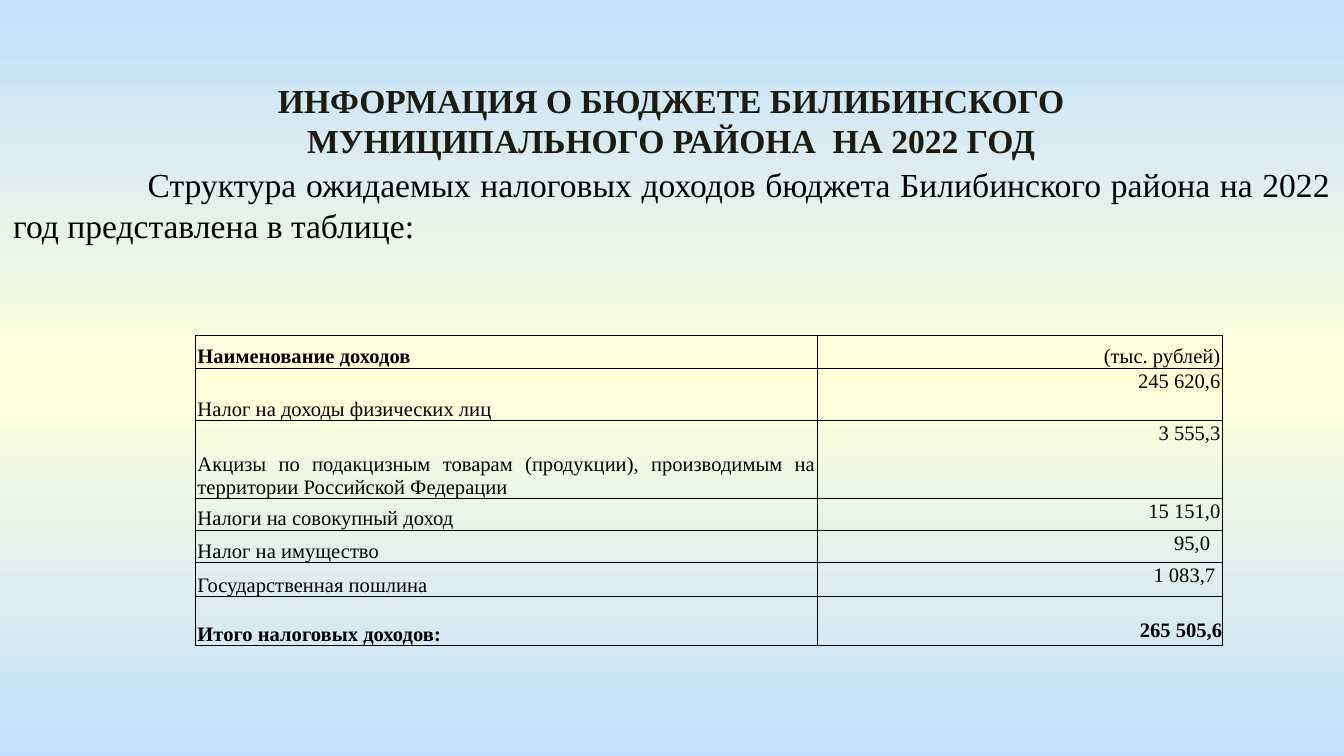
"""Build the slide on the expected tax revenues of the district budget for 2022."""
from copy import deepcopy

from pptx import Presentation
from pptx.dml.color import RGBColor
from pptx.enum.text import MSO_ANCHOR as Anchor, PP_ALIGN as Align
from pptx.oxml import parse_xml
from pptx.oxml.ns import nsdecls, qn
from pptx.util import Pt

TITLE = "ИНФОРМАЦИЯ О БЮДЖЕТЕ БИЛИБИНСКОГО МУНИЦИПАЛЬНОГО РАЙОНА  НА 2022 ГОД"
INTRO = ("Структура ожидаемых налоговых доходов бюджета Билибинского района "
         "на 2022 год представлена в таблице:")
HEADER = ("Наименование доходов", "(тыс. рублей)", 17.6)
TAXES = [
    ("Налог на доходы физических лиц", "245 620,6", 28),
    ("Акцизы по подакцизным товарам (продукции), производимым на территории "
     "Российской Федерации", "3 555,3", 41.8),
    ("Налоги на совокупный доход", "15 151,0", 16.8),
    ("Налог на имущество", "95,0", 17.6),
    ("Государственная пошлина", "1 083,7", 18.2),
]
TOTAL = ("Итого налоговых доходов:", "265 505,6", 26.2)
VALUE_INDENTS = {"95,0": 5.5, "1 083,7": 2.75}

FONT = "Times New Roman"
BLACK = RGBColor(0x00, 0x00, 0x00)
TITLE_INK = RGBColor(0x1E, 0x1C, 0x11)
SKY = RGBColor(0xC1, 0xE0, 0xFF)
CREAM = RGBColor(0xFF, 0xFF, 0xD9)
COLUMN_WIDTHS = (333.2, 216.8)


def write(paragraph, text, size, align, bold=False, ink=BLACK):
    paragraph.text = text
    paragraph.alignment = align
    font = paragraph.font
    font.name, font.size, font.bold = FONT, Pt(size), bold
    font.color.rgb = ink


def add_text(slide, box, text, align, bold=False, ink=BLACK):
    frame = slide.shapes.add_textbox(*map(Pt, box)).text_frame
    frame.word_wrap = True
    write(frame.paragraphs[0], text, 18, align, bold, ink)
    return frame.paragraphs[0]


def paint_background(slide):
    fill = slide.background.fill
    fill.gradient()
    fill.gradient_angle = 90
    stop_list = next(slide.element.iter(qn("a:gsLst")))
    stop_list.append(deepcopy(stop_list[0]))
    for stop, position, colour in zip(fill.gradient_stops, (0, 0.5, 1), (SKY, CREAM, SKY)):
        stop.position = position
        stop.color.rgb = colour


def fill_cell(cell, text, align, bold, anchor, right=1, bottom=0):
    cell.margin_left = cell.margin_top = Pt(1)
    cell.margin_right, cell.margin_bottom = Pt(right), Pt(bottom)
    cell.vertical_anchor = anchor
    properties = cell._tc.get_or_add_tcPr()
    for side in "LRTB":
        properties.append(parse_xml(
            f'<a:ln{side} {nsdecls("a")} w="{Pt(0.5)}"><a:solidFill>'
            f'<a:srgbClr val="{BLACK}"/></a:solidFill></a:ln{side}>'))
    cell.fill.background()
    write(cell.text_frame.paragraphs[0], text, 11, align, bold)


def add_revenue_table(slide):
    rows = [HEADER, *TAXES, TOTAL]
    height = sum(row[2] for row in rows)
    table = slide.shapes.add_table(
        len(rows), 2, Pt(104.8), Pt(179.8), Pt(sum(COLUMN_WIDTHS)), Pt(height)).table
    table.first_row = table.horz_banding = False
    for column, width in zip(table.columns, COLUMN_WIDTHS):
        column.width = Pt(width)
    for index, row in enumerate(rows):
        name, value, row_height = row
        table.rows[index].height = Pt(row_height)
        fill_cell(table.cell(index, 0), name, Align.JUSTIFY,
                  row in (HEADER, TOTAL), Anchor.BOTTOM)
        fill_cell(table.cell(index, 1), value, Align.RIGHT, row is TOTAL,
                  Anchor.BOTTOM if row in (HEADER, TOTAL) else Anchor.TOP,
                  right=0 if row is TOTAL else 1 + VALUE_INDENTS.get(value, 0),
                  bottom=2 if row is TOTAL else 0)


def main():
    deck = Presentation()
    deck.slide_width, deck.slide_height = Pt(720), Pt(405)
    slide = deck.slides.add_slide(deck.slide_layouts[6])
    paint_background(slide)
    add_text(slide, (81.4, 39, 556.6, 51), TITLE, Align.CENTER, True, TITLE_INK)
    intro = add_text(slide, (0, 84.4, 720, 51), INTRO, Align.JUSTIFY)
    intro._p.get_or_add_pPr().set("indent", str(Pt(72)))
    add_revenue_table(slide)
    deck.save("out.pptx")


if __name__ == "__main__":
    main()
